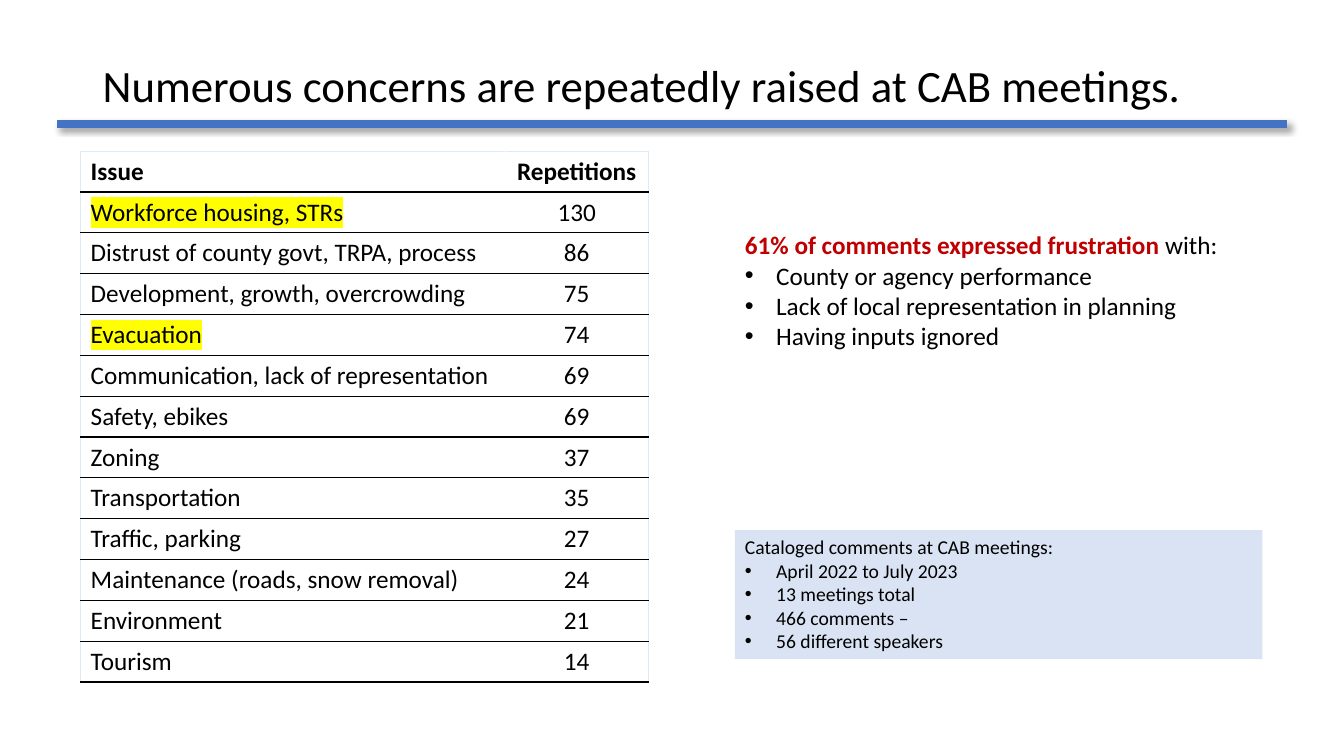
"""Build the slide on concerns raised at CAB meetings."""
from lxml.etree import SubElement
from pptx import Presentation
from pptx.dml.color import RGBColor
from pptx.enum.shapes import MSO_CONNECTOR
from pptx.enum.text import MSO_ANCHOR, MSO_AUTO_SIZE, PP_ALIGN
from pptx.oxml.ns import qn
from pptx.util import Emu, Pt

PX = 9144
BLACK = RGBColor(0x00, 0x00, 0x00)
RED = RGBColor(0xC0, 0x00, 0x00)
BLUE = RGBColor(0x44, 0x72, 0xC4)
PALE_BLUE = RGBColor(0xDA, 0xE3, 0xF3)
FRAME = RGBColor(0xDE, 0xEB, 0xF7)
YELLOW = RGBColor(0xFF, 0xFF, 0x00)

ISSUES = [
    ("Workforce housing, STRs", 130),
    ("Distrust of county govt, TRPA, process", 86),
    ("Development, growth, overcrowding", 75),
    ("Evacuation", 74),
    ("Communication, lack of representation", 69),
    ("Safety, ebikes", 69),
    ("Zoning", 37),
    ("Transportation", 35),
    ("Traffic, parking", 27),
    ("Maintenance (roads, snow removal)", 24),
    ("Environment", 21),
    ("Tourism", 14),
]
HIGHLIGHTED = {"Workforce housing, STRs", "Evacuation"}


def px(*lengths):
    """Turn px lengths into EMU."""
    return [Emu(n * PX) for n in lengths]


def add_color(parent, color):
    """Append an RGB colour element and return it."""
    return SubElement(parent, qn("a:srgbClr"), val=str(color))


def add_text(p, text, size=18, color=BLACK, bold=False, highlight=None):
    """Add a formatted run to a paragraph."""
    r = p.add_run()
    r.text = text
    r.font.size = Pt(size)
    r.font.bold = bold
    r.font.color.rgb = color
    if highlight is not None:
        add_color(SubElement(r.font._element, qn("a:highlight")), highlight)
    r.font.name = "Calibri"


def add_bullet(p):
    """Give a paragraph a hanging round bullet."""
    pPr = p._p.get_or_add_pPr()
    indent = px(31)[0]
    pPr.set("marL", str(indent))
    pPr.set("indent", str(-indent))
    SubElement(pPr, qn("a:buFont"), typeface="Arial")
    SubElement(pPr, qn("a:buChar"), char="•")


def add_box(slide, *box):
    """Add a wrapping text box."""
    s = slide.shapes.add_textbox(*px(*box))
    s.text_frame.word_wrap = True
    return s


def add_title(slide, text, *box):
    """Add the slide title."""
    tf = add_box(slide, *box).text_frame
    tf.vertical_anchor = MSO_ANCHOR.MIDDLE
    p = tf.paragraphs[0]
    p.line_spacing = 0.9
    add_text(p, text, size=32)


def add_rule(slide, x1, x2, y):
    """Add the shadowed line under the title."""
    s = slide.shapes.add_connector(MSO_CONNECTOR.STRAIGHT, *px(x1, y, x2, y))
    s.line.color.rgb = BLUE
    s.line.width = Pt(5.5)
    effects = SubElement(s._element.spPr, qn("a:effectLst"))
    shadow = SubElement(effects, qn("a:outerShdw"), blurRad=str(Pt(4)),
                        dist=str(Pt(3)), dir=str(45 * 60000),
                        algn="tl", rotWithShape="0")
    SubElement(add_color(shadow, BLACK), qn("a:alpha"), val="40000")


def add_border(cell, side, color, width):
    """Draw one side of a cell."""
    ln = SubElement(cell._tc.get_or_add_tcPr(), qn(f"a:ln{side}"),
                    w=str(Pt(width)))
    add_color(SubElement(ln, qn("a:solidFill")), color)


def add_issue_table(slide, *box):
    """Add the table of issues and their repetitions."""
    rows = [("Issue", "Repetitions")] + ISSUES
    table = slide.shapes.add_table(len(rows), 2, *px(*box)).table
    table.horz_banding = False
    for column, width in zip(table.columns, px(421, 142)):
        column.width = width
    for i, row in enumerate(rows):
        for j, value in enumerate(row):
            cell = table.cell(i, j)
            add_border(cell, "R" if j else "L", FRAME, 1)
            add_border(cell, "T", BLACK if i else FRAME, 2.25 if i == 1 else 1)
            add_border(cell, "B", BLACK, 1 if i else 2.25)
            cell.fill.background()
            p = cell.text_frame.paragraphs[0]
            p.alignment = PP_ALIGN.CENTER if j else PP_ALIGN.LEFT
            add_text(p, str(value), bold=i == 0,
                     highlight=YELLOW if value in HIGHLIGHTED else None)


def add_list(slide, box, lead, rest, bullets, size, fill=None, **lead_format):
    """Add a heading line followed by bullets."""
    s = add_box(slide, *box)
    if fill is not None:
        s.fill.solid()
        s.fill.fore_color.rgb = fill
    tf = s.text_frame
    tf.auto_size = MSO_AUTO_SIZE.SHAPE_TO_FIT_TEXT
    add_text(tf.paragraphs[0], lead, size=size, **lead_format)
    if rest:
        add_text(tf.paragraphs[0], rest, size=size)
    for text in bullets:
        p = tf.add_paragraph()
        add_bullet(p)
        add_text(p, text, size=size)


def main():
    """Build and save the slide."""
    prs = Presentation()
    prs.slide_width, prs.slide_height = px(1333, 750)
    slide = prs.slides.add_slide(prs.slide_layouts[6])
    add_rule(slide, 57, 1276, 123)
    add_title(slide, "Numerous concerns are repeatedly raised at CAB meetings.",
              92, 15, 1150, 145)
    add_issue_table(slide, 80, 150, 563, 527)
    add_list(slide, (729, 526, 523, 128),
             "Cataloged comments at CAB meetings:", "",
             ["April 2022 to July 2023", "13 meetings total",
              "466 comments –", "56 different speakers"],
             size=14, fill=PALE_BLUE)
    add_list(slide, (729, 223, 523, 131),
             "61% of comments expressed frustration", " with:",
             ["County or agency performance",
              "Lack of local representation in planning",
              "Having inputs ignored"],
             size=18, color=RED, bold=True)
    prs.save("out.pptx")


if __name__ == "__main__":
    main()
